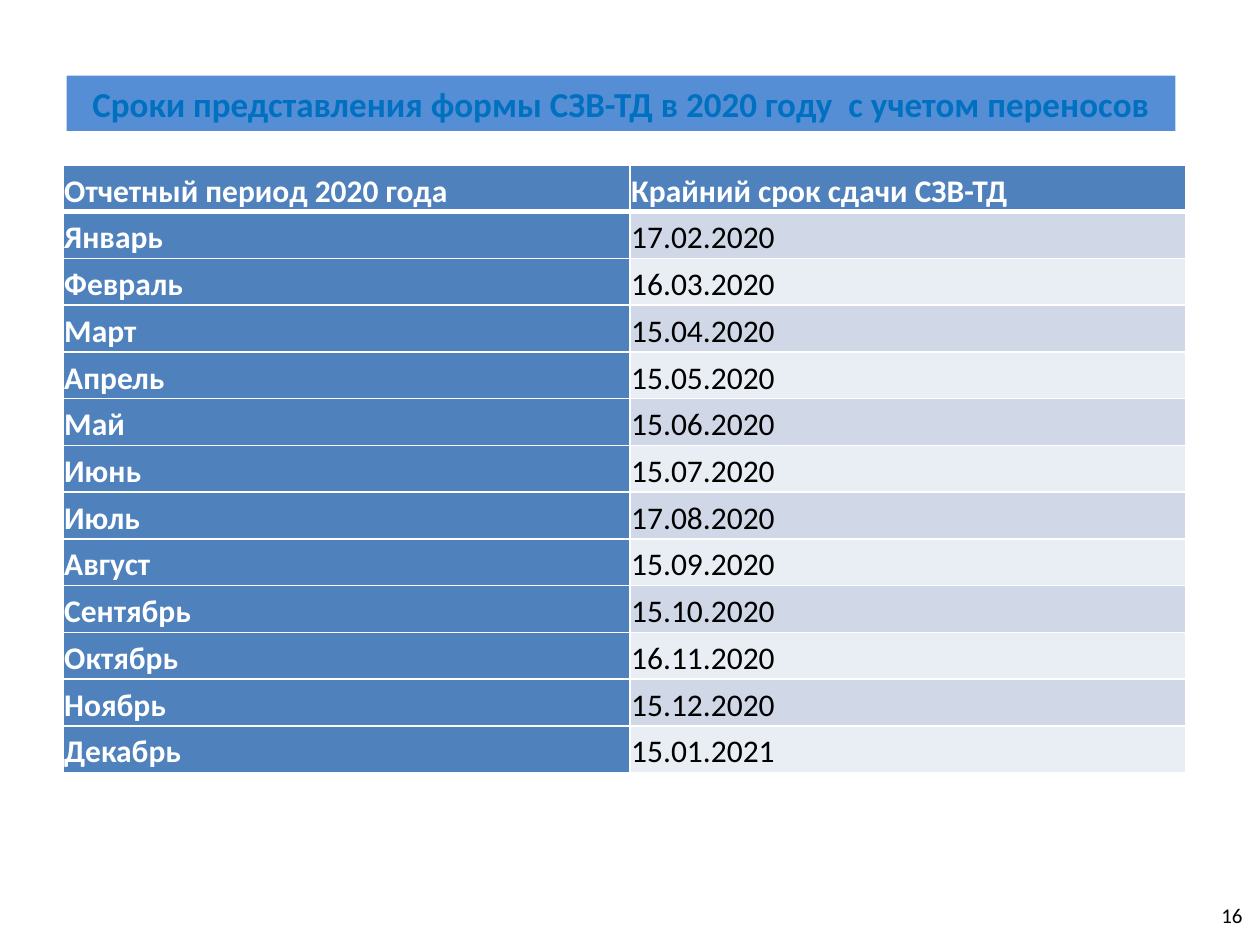
from dataclasses import dataclass

from lxml import etree
from pptx import Presentation
from pptx.dml.color import RGBColor
from pptx.enum.shapes import MSO_SHAPE
from pptx.enum.text import MSO_ANCHOR, PP_ALIGN
from pptx.oxml.ns import qn
from pptx.util import Inches, Pt

RECTANGLE = MSO_SHAPE.RECTANGLE
MIDDLE = MSO_ANCHOR.MIDDLE
LEFT, CENTER, RIGHT = PP_ALIGN.LEFT, PP_ALIGN.CENTER, PP_ALIGN.RIGHT


@dataclass(frozen=True)
class Theme:
    """Colours, font and type sizes of the page."""

    font: str = "Calibri"
    white: str = "FFFFFF"
    black: str = "000000"
    heading: str = "4F81BD"
    bands: tuple = ("D0D8E8", "E9EDF4")
    banner: str = "558ED5"
    banner_text: str = "0070C0"
    title_size: int = 20
    table_size: int = 18
    number_size: int = 12
    thin: int = 1
    thick: int = 3


THEME = Theme()
WIDTH, HEIGHT = Inches(10), Inches(7.5)
CELL_MARGIN = Inches(0.01)
COLUMNS = (Inches(4.5), Inches(4.41))
TITLE = "Сроки представления формы СЗВ-ТД в 2020 году  с учетом переносов"
DEADLINES = (
    ("Отчетный период 2020 года", "Крайний срок сдачи СЗВ-ТД"),
    ("Январь", "17.02.2020"),
    ("Февраль", "16.03.2020"),
    ("Март", "15.04.2020"),
    ("Апрель", "15.05.2020"),
    ("Май", "15.06.2020"),
    ("Июнь", "15.07.2020"),
    ("Июль", "17.08.2020"),
    ("Август", "15.09.2020"),
    ("Сентябрь", "15.10.2020"),
    ("Октябрь", "16.11.2020"),
    ("Ноябрь", "15.12.2020"),
    ("Декабрь", "15.01.2021"),
)


def area(left, top, width, height):
    """Turn shares of the slide's size into lengths."""
    return (int(WIDTH * left), int(HEIGHT * top),
            int(WIDTH * width), int(HEIGHT * height))


def paint(fill, color):
    """Give a fill one solid colour."""
    fill.solid()
    fill.fore_color.rgb = RGBColor.from_string(color)


def write(frame, text, size, color, bold=False, align=LEFT):
    """Put one formatted paragraph into a text frame and return it."""
    frame.text = text
    frame.word_wrap = True
    para = frame.paragraphs[0]
    para.alignment = align
    font = para.runs[0].font
    font.name, font.size, font.bold = THEME.font, Pt(size), bold
    font.color.rgb = RGBColor.from_string(color)
    return para


def add_banner(page, place):
    """Add the coloured title bar."""
    box = page.shapes.add_shape(RECTANGLE, *place)
    box.shadow.inherit = False
    box.line.fill.background()
    paint(box.fill, THEME.banner)
    box.text_frame.vertical_anchor = MIDDLE
    write(box.text_frame, TITLE, THEME.title_size, THEME.banner_text, True, CENTER)


def add_page_number(page, place, number):
    """Add the page number in the corner."""
    box = page.shapes.add_textbox(*place)
    box.text_frame.vertical_anchor = MIDDLE
    write(box.text_frame, number, THEME.number_size, THEME.black, align=RIGHT)


def add_borders(cell, top, bottom):
    """Draw white lines on the four sides of a cell."""
    properties = cell._tc.get_or_add_tcPr()
    widths = {"a:lnL": THEME.thin, "a:lnR": THEME.thin, "a:lnT": top, "a:lnB": bottom}
    for side, width in widths.items():
        line = etree.SubElement(properties, qn(side), w=str(Pt(width)))
        fill = etree.SubElement(line, qn("a:solidFill"))
        etree.SubElement(fill, qn("a:srgbClr"), val=THEME.white)


def fill_cell(cell, text, row, column):
    """Write and style one cell according to its place in the table."""
    is_heading = row == 0 or column == 0
    add_borders(cell,
                THEME.thick if row == 1 else THEME.thin,
                THEME.thick if row == 0 else THEME.thin)
    paint(cell.fill, THEME.heading if is_heading else THEME.bands[(row - 1) % 2])
    cell.vertical_anchor = MIDDLE
    cell.margin_left = cell.margin_right = CELL_MARGIN
    cell.margin_top = cell.margin_bottom = CELL_MARGIN
    color = THEME.white if is_heading else THEME.black
    para = write(cell.text_frame, text, THEME.table_size, color, is_heading)
    para.line_spacing = 1.15
    para.space_after = Pt(10)


def add_deadlines(page, place):
    """Add the table of reporting months and deadlines."""
    table = page.shapes.add_table(len(DEADLINES), len(COLUMNS), *place).table
    table.first_col = True
    for column, width in zip(table.columns, COLUMNS):
        column.width = width
    for row, texts in enumerate(DEADLINES):
        for column, text in enumerate(texts):
            fill_cell(table.cell(row, column), text, row, column)


def main():
    """Build the page and save the deck."""
    deck = Presentation()
    deck.slide_width, deck.slide_height = WIDTH, HEIGHT
    page = deck.slides.add_slide(deck.slide_layouts[6])
    add_deadlines(page, (Inches(0.5), Inches(1.31), sum(COLUMNS), Inches(4.76)))
    add_banner(page, (Inches(0.53), Inches(0.6), Inches(8.8), Inches(0.44)))
    add_page_number(page, area(0.957, 0.948, 0.039, 0.04), "16")
    deck.save("out.pptx")


if __name__ == "__main__":
    main()
